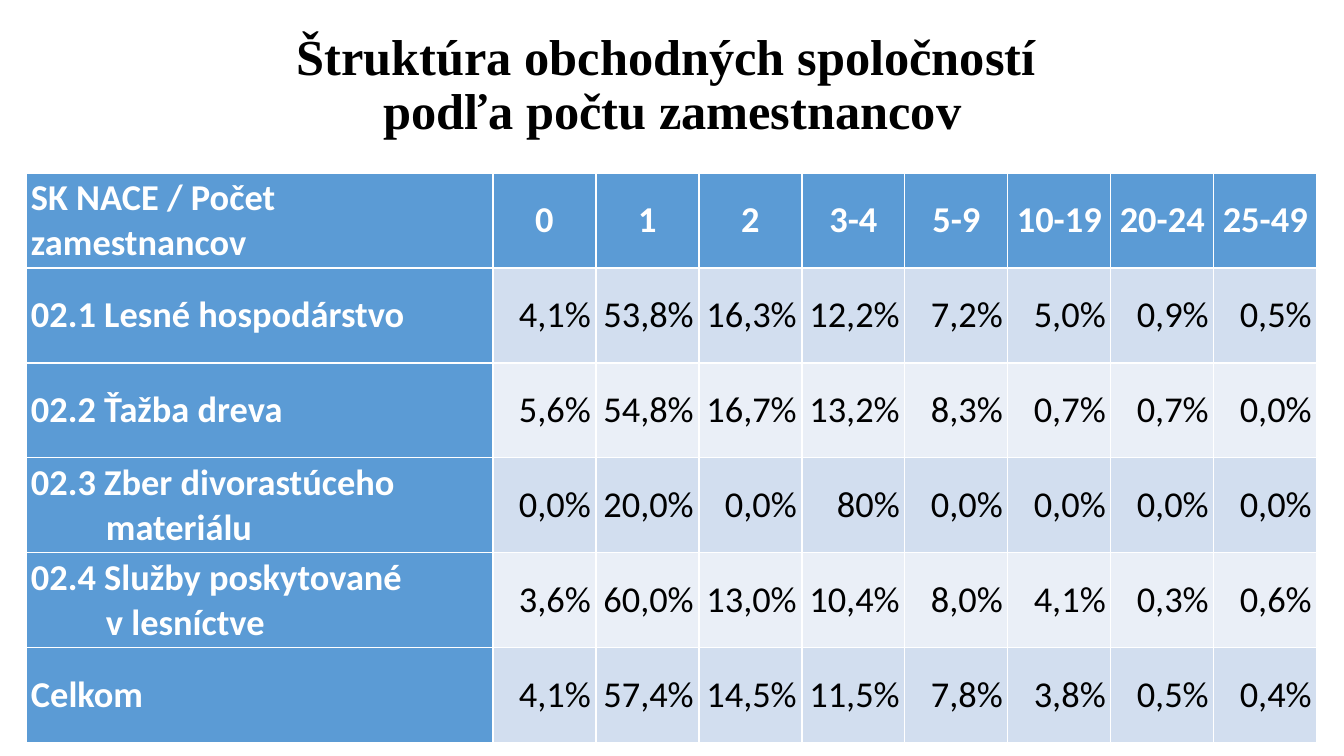
from pptx import Presentation
from pptx.dml.color import RGBColor
from pptx.enum.text import MSO_ANCHOR, MSO_AUTO_SIZE, PP_ALIGN
from pptx.util import Pt

LEFT, MID, RIGHT = PP_ALIGN.LEFT, PP_ALIGN.CENTER, PP_ALIGN.RIGHT
CENTRE = MSO_ANCHOR.MIDDLE
COLORS = {"text": "000000", "light": "FFFFFF", "head": "5B9BD5",
          "odd": "D2DEEF", "even": "EAEFF7"}
ROWS = [
    ["SK NACE / Počet zamestnancov", "0", "1", "2", "3-4", "5-9", "10-19", "20-24", "25-49"],
    ["02.1 Lesné hospodárstvo", "4,1%", "53,8%", "16,3%", "12,2%", "7,2%", "5,0%", "0,9%", "0,5%"],
    ["02.2 Ťažba dreva", "5,6%", "54,8%", "16,7%", "13,2%", "8,3%", "0,7%", "0,7%", "0,0%"],
    ["02.3 Zber divorastúceho\nmateriálu", "0,0%", "20,0%", "0,0%", "80%", "0,0%", "0,0%", "0,0%", "0,0%"],
    ["02.4 Služby poskytované\nv lesníctve", "3,6%", "60,0%", "13,0%", "10,4%", "8,0%", "4,1%", "0,3%", "0,6%"],
    ["Celkom", "4,1%", "57,4%", "14,5%", "11,5%", "7,8%", "3,8%", "0,5%", "0,4%"],
]
NAME_W, COL_W, ROW_H = 467, 103, 95


def px(n):
    return round(n * 914400 / 100.8)


def style(par, font, size, color, bold, align):
    par.alignment = align
    for run in par.runs:
        run.font.name = font
        run.font.size = Pt(size)
        run.font.bold = bold
        run.font.color.rgb = RGBColor.from_string(COLORS[color])


prs = Presentation()
prs.slide_width, prs.slide_height = px(1344), px(756)
slide = prs.slides.add_slide(prs.slide_layouts[5])

# Title
title = slide.shapes.title
title.left, title.top, title.width, title.height = px(93), px(13), px(1159), px(146)
frame = title.text_frame
frame.text = "Štruktúra obchodných spoločností \vpodľa počtu zamestnancov"
frame.auto_size = MSO_AUTO_SIZE.NONE
frame.vertical_anchor = CENTRE
frame.paragraphs[0].line_spacing = 0.9
style(frame.paragraphs[0], "Times New Roman", 36, "text", True, MID)

# Table: the built-in style draws the white grid
count = len(ROWS[0])
table = slide.shapes.add_table(
    len(ROWS), count, px(26), px(173),
    px(NAME_W + COL_W * (count - 1)), px(ROW_H * len(ROWS))).table
table.first_col = True
for c, col in enumerate(table.columns):
    col.width = px(COL_W if c else NAME_W)

for r, row in enumerate(ROWS):
    table.rows[r].height = px(ROW_H)
    for c, text in enumerate(row):
        cell = table.cell(r, c)
        head = r == 0 or c == 0
        fill = "head" if head else "odd" if r % 2 else "even"
        align = LEFT if c == 0 else MID if r == 0 else RIGHT
        cell.fill.solid()
        cell.fill.fore_color.rgb = RGBColor.from_string(COLORS[fill])
        cell.vertical_anchor = CENTRE
        cell.margin_left = cell.margin_right = px(5)
        cell.margin_top = cell.margin_bottom = 0
        cell.text_frame.text = text
        for n, par in enumerate(cell.text_frame.paragraphs):
            style(par, "Calibri", 26, "light" if head else "text", head, align)
            if n:
                par._p.get_or_add_pPr().set("marL", str(px(75)))

prs.save("out.pptx")
